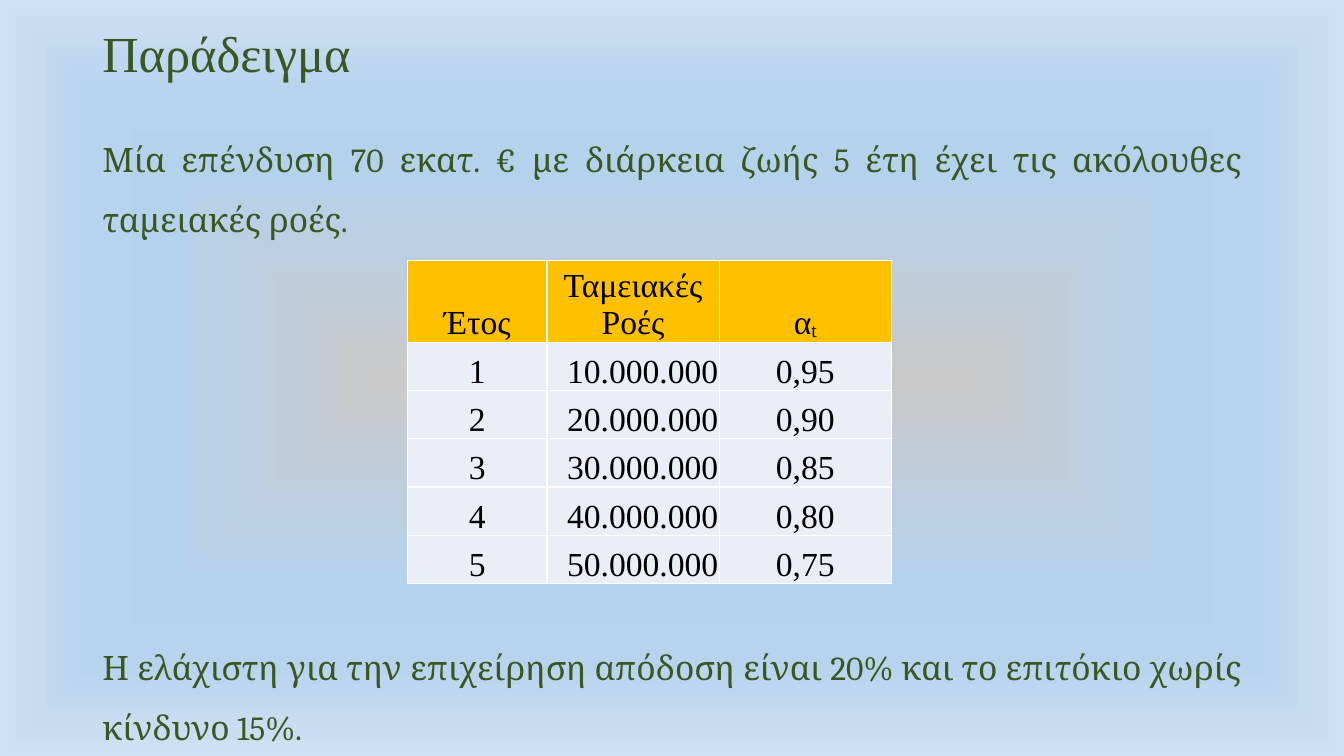
from pptx import Presentation
from pptx.dml.color import RGBColor
from pptx.enum.text import MSO_ANCHOR as Anchor, PP_ALIGN as Align
from pptx.oxml import parse_xml
from pptx.oxml.ns import nsdecls
from pptx.util import Pt

EMU_PER_PX = 9525
GREEN = RGBColor(0x38, 0x57, 0x23)
BLACK = RGBColor(0x00, 0x00, 0x00)
WHITE = RGBColor(0xFF, 0xFF, 0xFF)
AMBER = RGBColor(0xFF, 0xC0, 0x00)
PALE = RGBColor(0xEA, 0xEF, 0xF7)
GLOW = [
    (0, RGBColor(0xC9, 0xC9, 0xC9)),
    (36, RGBColor(0xBB, 0xCF, 0xE1)),
    (45, RGBColor(0xB8, 0xD1, 0xE7)),
    (54, RGBColor(0xB5, 0xD2, 0xEC)),
    (65, RGBColor(0xB5, 0xD2, 0xEC)),
    (75, RGBColor(0xB7, 0xD3, 0xED)),
    (100, RGBColor(0xCE, 0xE1, 0xF2)),
]
CASH_FLOWS = [
    ("Έτος", "Ταμειακές Ροές", "α"),
    ("1", "10.000.000", "0,95"),
    ("2", "20.000.000", "0,90"),
    ("3", "30.000.000", "0,85"),
    ("4", "40.000.000", "0,80"),
    ("5", "50.000.000", "0,75"),
]


def px(value):
    return value * EMU_PER_PX


class SlideWriter:
    heading_font = "Times New Roman"
    body_font = "Cambria"
    body_size = 24

    def __init__(self, deck):
        self.page = deck.slides.add_slide(deck.slide_layouts[6])

    def background(self, stops):
        marks = "".join(
            f'<a:gs pos="{place * 1000}"><a:srgbClr val="{color}"/></a:gs>'
            for place, color in stops
        )
        fill = (
            f'<p:bg {nsdecls("p", "a")}><p:bgPr><a:gradFill rotWithShape="1">'
            f'<a:gsLst>{marks}</a:gsLst><a:path path="shape">'
            '<a:fillToRect l="50000" t="50000" r="50000" b="50000"/></a:path>'
            '</a:gradFill><a:effectLst/></p:bgPr></p:bg>'
        )
        self.page.element.cSld.insert(0, parse_xml(fill))

    def style(self, para, font, size, color, align):
        para.alignment = align
        for span in para.runs:
            span.font.name = font
            span.font.size = Pt(size)
            span.font.color.rgb = color

    def text(self, words, left, top, width, height, font, size, spacing, before=0, anchor=Anchor.TOP):
        box = self.page.shapes.add_textbox(px(left), px(top), px(width), px(height))
        frame = box.text_frame
        frame.word_wrap = True
        frame.vertical_anchor = anchor
        frame.text = words
        para = frame.paragraphs[0]
        para.line_spacing = spacing
        para.space_before = Pt(before)
        self.style(para, font, size, GREEN, Align.JUSTIFY)

    def title(self, words):
        self.text(words, 88, 0, 1104, 108, self.heading_font, 36, 0.9, anchor=Anchor.MIDDLE)

    def body(self, words, top):
        self.text(words, 88, top, 1104, 128, self.body_font, self.body_size, 1.5, before=10)

    def border(self, cell):
        properties = cell._tc.get_or_add_tcPr()
        for index, side in enumerate("LRTB"):
            line = (
                f'<a:ln{side} {nsdecls("a")} w="{Pt(1)}"><a:solidFill>'
                f'<a:srgbClr val="{WHITE}"/></a:solidFill></a:ln{side}>'
            )
            properties.insert(index, parse_xml(line))

    def cell(self, cell, words, fill, align):
        cell.text = words
        cell.vertical_anchor = Anchor.BOTTOM
        cell.margin_left = cell.margin_right = cell.margin_top = px(1)
        cell.margin_bottom = 0
        cell.fill.solid()
        cell.fill.fore_color.rgb = fill
        self.border(cell)
        self.style(cell.text_frame.paragraphs[0], self.heading_font, self.body_size, BLACK, align)

    def table(self, rows, left, top, widths, heights):
        frame = self.page.shapes.add_table(
            len(rows), len(widths), px(left), px(top), px(sum(widths)), px(sum(heights))
        )
        table = frame.table
        table.horz_banding = False
        for column, width in zip(table.columns, widths):
            column.width = px(width)
        for row, height in zip(table.rows, heights):
            row.height = px(height)
        for i, row in enumerate(rows):
            for j, words in enumerate(row):
                align = Align.RIGHT if i and j == 1 else Align.CENTER
                self.cell(table.cell(i, j), words, PALE if i else AMBER, align)
        return table

    def subscript(self, cell, words):
        para = cell.text_frame.paragraphs[0]
        span = para.add_run()
        span.text = words
        self.style(para, self.heading_font, self.body_size, BLACK, Align.CENTER)
        span._r.get_or_add_rPr().set("baseline", "-10000")


def main():
    deck = Presentation()
    deck.slide_width = px(1280)
    deck.slide_height = px(720)
    writer = SlideWriter(deck)
    writer.background(GLOW)
    writer.title("Παράδειγμα")
    writer.body(
        "Μία επένδυση 70 εκατ. € με διάρκεια ζωής 5 έτη έχει τις ακόλουθες ταμειακές ροές.", 108
    )
    writer.body(
        "Η ελάχιστη για την επιχείρηση απόδοση είναι 20% και το επιτόκιο χωρίς κίνδυνο 15%.", 592
    )
    table = writer.table(CASH_FLOWS, 388, 248, [133, 164, 164], [73] + [46] * 5)
    writer.subscript(table.cell(0, 2), "t")
    deck.save("out.pptx")


if __name__ == "__main__":
    main()
